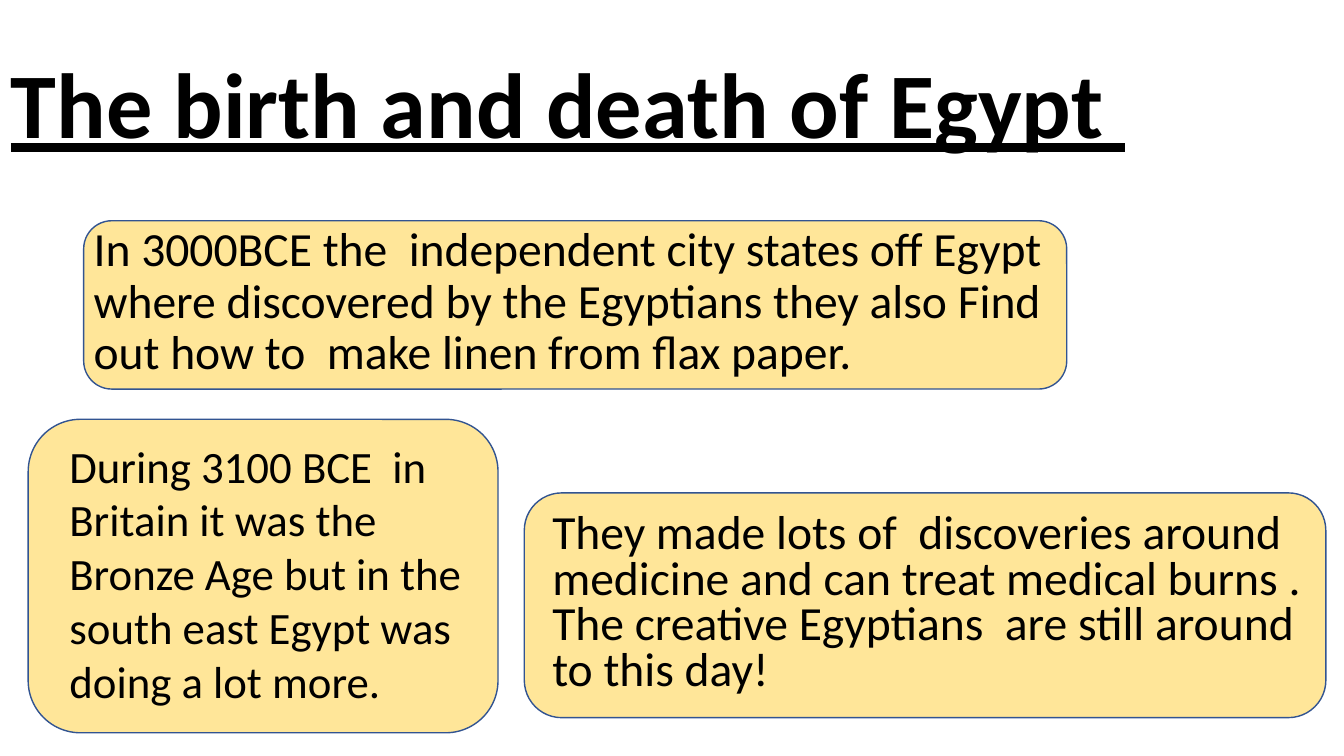
"""Build the slide on the birth and death of Egypt."""
import pptx
import pptx.dml.color
import pptx.enum.shapes
import pptx.util

Inches, Pt = pptx.util.Inches, pptx.util.Pt

COLORS = {"text": "000000", "panel": "FFE699", "outline": "325491"}
FONT = "Calibri"
TITLE = ("The birth and death of Egypt  ", (0.01, 0.53, 11.42, 1.25))
FACTS = [
    {"text": "In 3000BCE the  independent city states off Egypt where discovered "
             "by the Egyptians they also Find out how to  make linen from flax paper.",
     "panel": (0.83, 2.19, 9.75, 1.67), "box": (0.83, 2.19, 10.19, 1.75),
     "size": 34, "spacing": 0.9},
    {"text": "They made lots of  discoveries around medicine and can treat medical "
             "burns . The creative Egyptians  are still around to this day!",
     "panel": (5.2, 4.89, 7.95, 2.23), "box": (5.38, 5.04, 7.77, 1.96),
     "size": 34, "spacing": 0.8},
    {"text": "During 3100 BCE  in Britain it was the Bronze Age but in the south "
             "east Egypt was doing a lot more.",
     "panel": (0.28, 4.16, 4.66, 3.11), "box": (0.59, 4.3, 4.17, 2.79),
     "size": 32, "spacing": 1.0},
]


def rgb(name):
    return pptx.dml.color.RGBColor.from_string(COLORS[name])


def add_text(s, text, box, size=34, spacing=1.0, bold=False, underline=False):
    tf = s.shapes.add_textbox(*map(Inches, box)).text_frame
    tf.word_wrap = True
    p = tf.paragraphs[0]
    p.line_spacing = spacing
    r = p.add_run()
    r.text = text
    r.font.name, r.font.size = FONT, Pt(size)
    r.font.bold, r.font.underline = bold, underline
    r.font.color.rgb = rgb("text")


def add_panel(s, box):
    kind = pptx.enum.shapes.MSO_SHAPE.ROUNDED_RECTANGLE
    sp = s.shapes.add_shape(kind, *map(Inches, box))
    sp.shadow.inherit = False
    sp.fill.solid()
    sp.fill.fore_color.rgb = rgb("panel")
    sp.line.color.rgb = rgb("outline")
    sp.line.width = Pt(1)


def main():
    prs = pptx.Presentation()
    prs.slide_width, prs.slide_height = Inches(13.33), Inches(7.5)
    s = prs.slides.add_slide(prs.slide_layouts[6])
    title, box = TITLE
    add_text(s, title, box, size=66, spacing=0.9, bold=True, underline=True)
    for fact in FACTS:
        add_panel(s, fact["panel"])
        add_text(s, fact["text"], fact["box"], size=fact["size"], spacing=fact["spacing"])
    prs.save("out.pptx")


if __name__ == "__main__":
    main()
